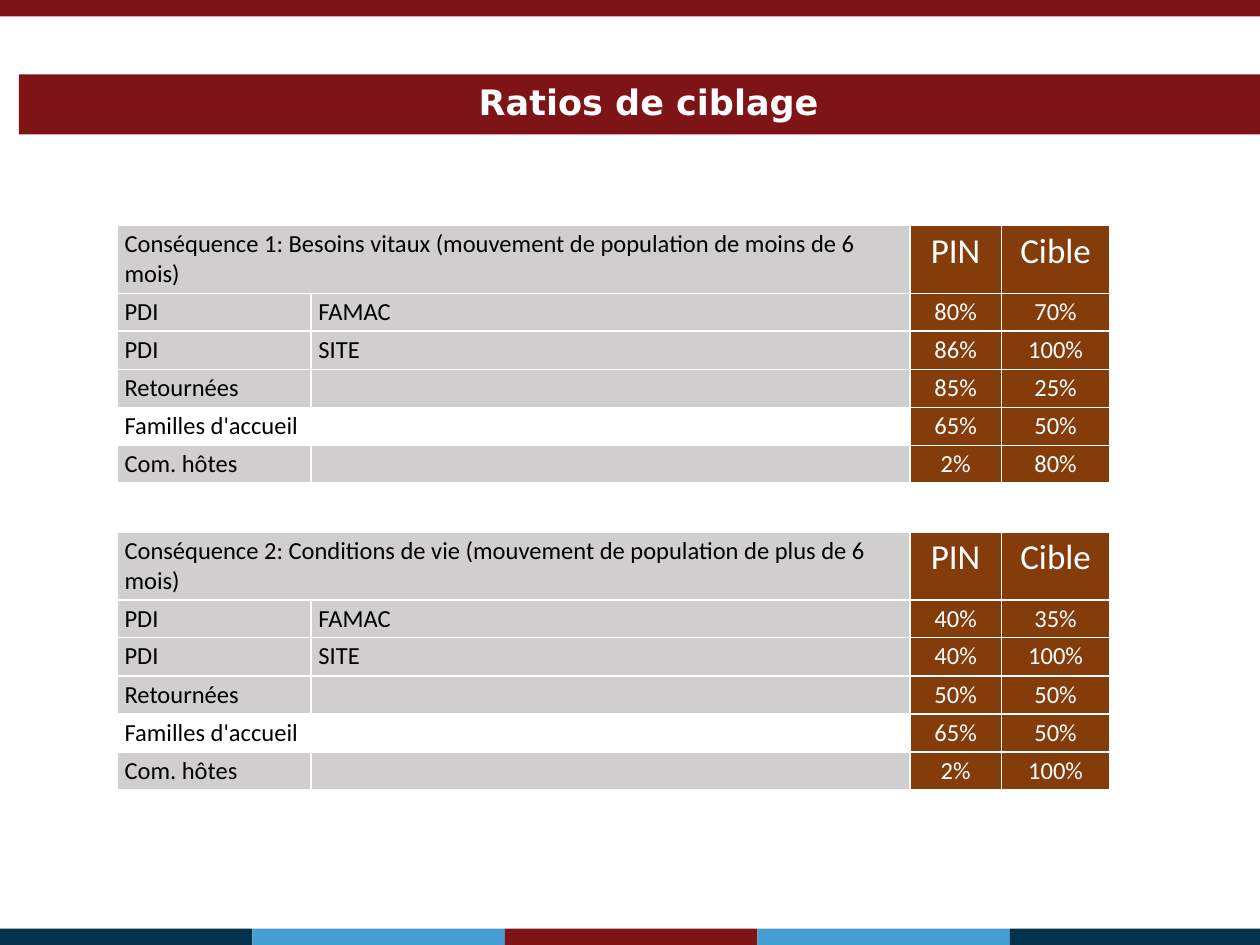
from dataclasses import dataclass

from pptx import Presentation
from pptx.dml.color import RGBColor
from pptx.enum.shapes import MSO_SHAPE
from pptx.enum.text import MSO_ANCHOR, PP_ALIGN
from pptx.util import Cm, Pt


@dataclass(frozen=True)
class Theme:
    red: str = "7F1416"
    navy: str = "04314C"
    blue: str = "459FD5"
    grey: str = "D0CECE"
    brown: str = "843C0B"
    white: str = "FFFFFF"
    black: str = "000000"
    head: str = "DejaVu Sans"
    body: str = "Calibri"
    large: int = 20
    small: int = 14


class Painter:
    """Draws the bars, the title and the ratio tables on one slide."""

    def __init__(self, slide, theme):
        self.slide = slide
        self.theme = theme

    def label(self, frame, text, size, color, align, font, bold=False):
        frame.text = text
        para = frame.paragraphs[0]
        para.alignment = align
        for run in para.runs:
            run.font.name = font
            run.font.size = Pt(size)
            run.font.bold = bold
            run.font.color.rgb = RGBColor.from_string(color)
        if not text:
            para._p.get_or_add_endParaRPr().set("sz", str(size * 100))

    def bar(self, left, top, width, height, color):
        shape = self.slide.shapes.add_shape(
            MSO_SHAPE.RECTANGLE, Cm(left), Cm(top), Cm(width), Cm(height))
        shape.shadow.inherit = False
        shape.fill.solid()
        shape.fill.fore_color.rgb = RGBColor.from_string(color)
        shape.line.fill.background()
        return shape

    def title(self, text):
        look = self.theme
        frame = self.bar(0.38, 1.5, 25.4, 1.21, look.red).text_frame
        frame.vertical_anchor = MSO_ANCHOR.MIDDLE
        self.label(frame, text, look.large, look.white, PP_ALIGN.CENTER, look.head, True)
        frame.paragraphs[0].line_spacing = 0.9

    def cell(self, cell, text, size, fill, color, align):
        cell.margin_left = cell.margin_right = Cm(0.15)
        cell.margin_top = cell.margin_bottom = Cm(0.08)
        if fill:
            cell.fill.solid()
            cell.fill.fore_color.rgb = RGBColor.from_string(fill)
        else:
            cell.fill.background()
        self.label(cell.text_frame, text, size, color, align, self.theme.body)

    def table(self, top, rows):
        look = self.theme
        widths = (3.91, 12.07, 1.85, 2.18)
        heights = (1.33, 0.75, 0.77, 0.77, 0.76, 0.75)
        table = self.slide.shapes.add_table(
            len(rows), len(widths), Cm(2.36), Cm(top),
            Cm(sum(widths)), Cm(sum(heights))).table
        table.horz_banding = False
        for column, width in zip(table.columns, widths):
            column.width = Cm(width)
        for row, height in zip(table.rows, heights):
            row.height = Cm(height)
        for i, row in enumerate(rows):
            plain = row[0].startswith("Familles")
            for j, text in enumerate(row):
                cell = table.cell(i, j)
                if j < 2:
                    fill = None if plain else look.grey
                    self.cell(cell, text, look.small, fill, look.black, PP_ALIGN.LEFT)
                else:
                    size = look.small if i else look.large
                    self.cell(cell, text, size, look.brown, look.white, PP_ALIGN.CENTER)
        table.cell(0, 0).merge(table.cell(0, 1))


def main():
    deck = Presentation()
    deck.slide_width, deck.slide_height = Cm(25.4), Cm(19.05)
    theme = Theme()
    paint = Painter(deck.slides.add_slide(deck.slide_layouts[6]), theme)

    paint.bar(0, 0, 25.4, 0.33, theme.red)
    bands = (theme.navy, theme.blue, theme.red, theme.blue, theme.navy)
    for i, color in enumerate(bands):
        paint.bar(i * 5.09, 18.72, 5.09, 0.33, color)
    paint.title("Ratios de ciblage")

    groups = (("PDI", "FAMAC"), ("PDI", "SITE"), ("Retournées", ""),
              ("Familles d'accueil", ""), ("Com. hôtes", ""))
    tables = (
        (4.55, "Conséquence 1: Besoins vitaux (mouvement de population de moins de 6 mois)",
         ((80, 70), (86, 100), (85, 25), (65, 50), (2, 80))),
        (10.73, "Conséquence 2: Conditions de vie (mouvement de population de plus de 6 mois)",
         ((40, 35), (40, 100), (50, 50), (65, 50), (2, 100))),
    )
    for top, heading, ratios in tables:
        rows = [(heading, "", "PIN", "Cible")]
        for group, pair in zip(groups, ratios):
            rows.append((*group, *(f"{value}%" for value in pair)))
        paint.table(top, rows)

    deck.save("out.pptx")


if __name__ == "__main__":
    main()
